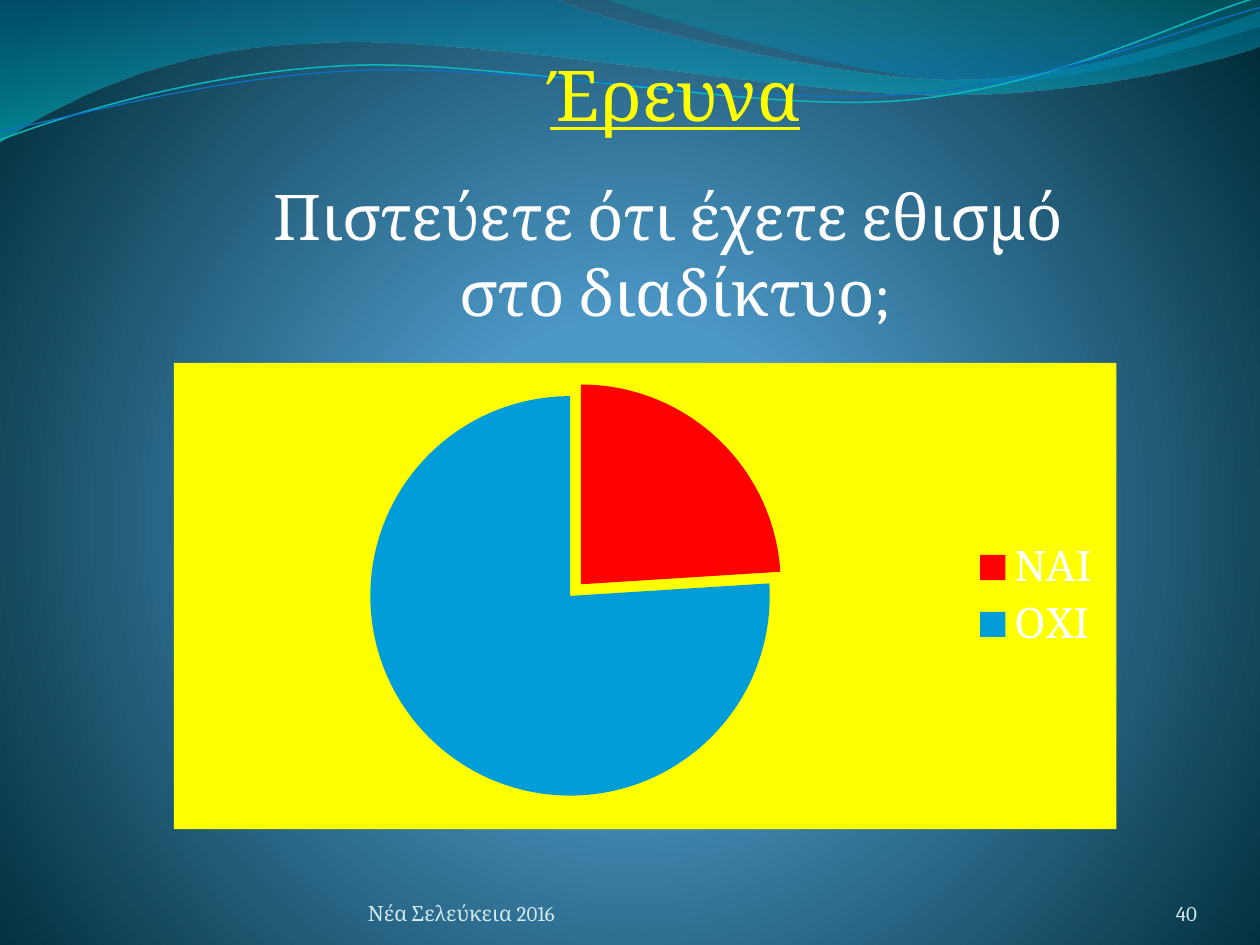
import math

import pptx
import pptx.chart.data
import pptx.dml.color
import pptx.enum.chart
import pptx.enum.text
import pptx.oxml
import pptx.oxml.ns
import pptx.util

RGB = pptx.dml.color.RGBColor
ALIGN = pptx.enum.text.PP_ALIGN
YELLOW, WHITE, RED = RGB(255, 255, 0), RGB(255, 255, 255), RGB(255, 0, 0)
BLUE, PALE = RGB(0, 157, 217), RGB(209, 234, 238)
AQUA, NAVY = RGB(10, 184, 191), RGB(15, 111, 198)
SKY, MID, DARK = RGB(74, 160, 214), RGB(76, 152, 199), RGB(0, 44, 56)
SEA, TEAL = RGB(0, 116, 161), RGB(0, 198, 207)
GREEN, AZURE = RGB(0, 161, 169), RGB(0, 139, 191)

DOWN = '<a:lin ang="5400000" scaled="0"/>'
GLOW = ('<a:path path="circle"><a:fillToRect l="10000" t="110000" '
        'r="10000" b="100000"/></a:path>')
NS = pptx.oxml.ns.nsdecls("a", "c")


def turn(pt, deg, hub=(4.99, 0.58)):
    """Turn a point clockwise about the hub."""
    cos, sin = math.cos(math.radians(deg)), math.sin(math.radians(deg))
    dx, dy = pt[0] - hub[0], pt[1] - hub[1]
    return hub[0] + dx * cos - dy * sin, hub[1] + dx * sin + dy * cos


class Deck:
    """Style and current slide; lengths are in grid cells, 10 x 7.5."""
    COLS, ROWS = 10, 7.5
    FONT = "Cambria"

    def __init__(self):
        self.prs = pptx.Presentation()
        self.prs.slide_width = pptx.util.Inches(10)
        self.prs.slide_height = pptx.util.Inches(7.5)
        self.slide = self.prs.slides.add_slide(self.prs.slide_layouts[6])

    def x(self, cols):
        return round(self.prs.slide_width * cols / self.COLS)

    def y(self, rows):
        return round(self.prs.slide_height * rows / self.ROWS)

    def box(self, left, top, wide, high):
        return self.x(left), self.y(top), self.x(wide), self.y(high)

    def blend(self, node, stops, shape):
        """Swap the solid fill below node for a gradient."""
        gs = "".join(
            f'<a:gs pos="{pos * 1000}"><a:srgbClr val="{hue}">'
            f'<a:alpha val="{alpha * 1000}"/></a:srgbClr></a:gs>'
            for pos, hue, alpha in stops)
        old = next(node.iter(pptx.oxml.ns.qn("a:solidFill")))
        old.getparent().replace(old, pptx.oxml.parse_xml(
            f'<a:gradFill {NS} rotWithShape="1"><a:gsLst>{gs}</a:gsLst>'
            f'{shape}</a:gradFill>'))

    def back(self, stops):
        back = self.slide.background
        back.fill.solid()
        back.fill.fore_color.rgb = DARK
        self.blend(self.slide.element, stops, GLOW)

    def wave(self, start, parts, stops=None, line=None, tilt=0):
        """Parts are lines (2 numbers) or Bezier curves (6 numbers)."""
        legs = []
        for part in [start, *parts]:
            pts = [turn(pt, -tilt) for pt in zip(part[::2], part[1::2])]
            legs.append([(self.x(a), self.y(b)) for a, b in pts])
        ends = [leg[-1] for leg in legs]
        pen = self.slide.shapes.build_freeform(*ends[0], scale=1.0)
        pen.add_line_segments(ends[1:], close=bool(stops))
        form = pen.convert_to_shape()
        form.shadow.inherit = False
        # Bend the straight legs into curves
        lines = list(form.element.iter(pptx.oxml.ns.qn("a:lnTo")))
        for old, leg in zip(lines, legs[1:]):
            if len(leg) == 3:
                pts = "".join(f'<a:pt x="{a - form.left}" y="{b - form.top}"/>'
                              for a, b in leg)
                old.getparent().replace(old, pptx.oxml.parse_xml(
                    f'<a:cubicBezTo {NS}>{pts}</a:cubicBezTo>'))
        form.rotation = tilt
        if stops:
            form.fill.solid()
            form.line.fill.background()
            self.blend(form.element.spPr, stops, DOWN)
        else:
            form.fill.background()
            form.line.color.rgb, form.line.width = line[0], pptx.util.Pt(line[1])

    def text(self, place, lines, **frame):
        """Each line is text, font values, colour and paragraph values."""
        body = self.slide.shapes.add_textbox(*self.box(*place)).text_frame
        for key, val in {"word_wrap": True, **frame}.items():
            setattr(body, key, val)
        for i, (words, font, hue, para) in enumerate(lines):
            p = body.add_paragraph() if i else body.paragraphs[0]
            for key, val in para.items():
                setattr(p, key, val)
            run = p.add_run()
            run.text = words
            for key, val in {"name": self.FONT, **font}.items():
                setattr(run.font, key, val)
            run.font.color.rgb = hue

    def note(self, place, words, align):
        self.text(place, [(words, {"size": pptx.util.Pt(12)}, PALE,
                           {"alignment": align})],
                  vertical_anchor=pptx.enum.text.MSO_ANCHOR.BOTTOM,
                  margin_left=0, margin_right=0, margin_top=0, margin_bottom=0)

    def pie(self, place, name, vals, hues, fill, burst):
        data = pptx.chart.data.CategoryChartData()
        data.categories = list(vals)
        data.add_series(name, list(vals.values()))
        chart = self.slide.shapes.add_chart(
            pptx.enum.chart.XL_CHART_TYPE.PIE, *self.box(*place), data).chart
        chart.has_title = False
        chart.has_legend = True
        key = chart.legend
        key.position = pptx.enum.chart.XL_LEGEND_POSITION.RIGHT
        key.include_in_layout = False
        for font, size in ((chart.font, 10), (key.font, 24)):
            font.name, font.size = self.FONT, pptx.util.Pt(size)
            font.color.rgb = WHITE
        plot = chart.plots[0]
        plot.vary_by_categories = True
        for i, hue in enumerate(hues):
            part = plot.series[0].points[i].format
            part.fill.solid()
            part.fill.fore_color.rgb = hue
        # Pull out the first slice
        first = next(chart.element.iter(pptx.oxml.ns.qn("c:dPt")))
        first.find(pptx.oxml.ns.qn("c:spPr")).addprevious(
            pptx.oxml.parse_xml(f'<c:explosion {NS} val="{burst}"/>'))
        # Panel behind the pie
        chart.element.find(pptx.oxml.ns.qn("c:chart")).addnext(
            pptx.oxml.parse_xml(
                f'<c:spPr {NS}><a:solidFill><a:srgbClr val="{fill}"/>'
                '</a:solidFill><a:ln><a:noFill/></a:ln></c:spPr>'))


def main():
    deck = Deck()
    deck.back([(0, SKY, 100), (25, MID, 100), (100, DARK, 100)])

    # Waves along the top
    deck.wave((0, 0), [
        (4.4, -0.01), (4.76, 0.17, 6.64, 0.63, 7.58, 0.63),
        (8.53, 0.63, 9.58, 0.26, 10, 0.09), (10.01, 0.36),
        (9.83, 0.44, 8.7, 0.76, 7.46, 0.75),
        (6.22, 0.75, 3.82, 0.28, 2.57, 0.34),
        (1.29, 0.36, 0.46, 0.83, -0.01, 1.13)],
        stops=[(0, SEA, 45), (100, TEAL, 55)])
    deck.wave((4.79, -0.01), [
        (5.09, 0.11, 6.82, 0.62, 7.69, 0.65),
        (8.56, 0.69, 9.61, 0.32, 10, 0.21), (10, 0)],
        stops=[(0, GREEN, 30), (80, AZURE, 45)])
    deck.wave((0, 1.11), [
        (0.48, 0.93, 1.58, 0.57, 2.77, 0.52),
        (3.95, 0.47, 5.93, 0.89, 7.13, 0.8),
        (8.33, 0.71, 9.38, 0.15, 9.98, -0.02)], line=(AQUA, 0.85), tilt=-2.7)
    deck.wave((0, 1.04), [
        (0.47, 0.96, 1.64, 0.61, 2.83, 0.56),
        (4.03, 0.51, 5.97, 0.84, 7.17, 0.75),
        (8.36, 0.67, 9.41, 0.21, 10, 0.06)], line=(NAVY, 0.75), tilt=-2.7)

    # Title and question
    mid = {"alignment": ALIGN.CENTER}
    big = {"size": pptx.util.Pt(36)}
    deck.text((0.91, 0.36, 8.9, 2.39), [
        ("Έρευνα", {"size": pptx.util.Pt(40), "underline": True}, YELLOW, mid),
        ("Πιστεύετε ότι έχετε εθισμό ", big, WHITE,
         {**mid, "space_before": pptx.util.Pt(24)}),
        ("στο διαδίκτυο;", big, WHITE, mid)],
        auto_size=pptx.enum.text.MSO_AUTO_SIZE.SHAPE_TO_FIT_TEXT)

    # Answers
    deck.pie((1.38, 2.88, 7.48, 3.7), "Series 1", {"ΝΑΙ": 24, "ΟΧΙ": 76},
             (RED, BLUE), YELLOW, 8)

    # Footer
    deck.note((2.92, 6.95, 3.67, 0.4), "Νέα Σελεύκεια 2016", ALIGN.LEFT)
    deck.note((8.67, 6.95, 0.83, 0.4), "40", ALIGN.RIGHT)

    deck.prs.save("out.pptx")


if __name__ == "__main__":
    main()
